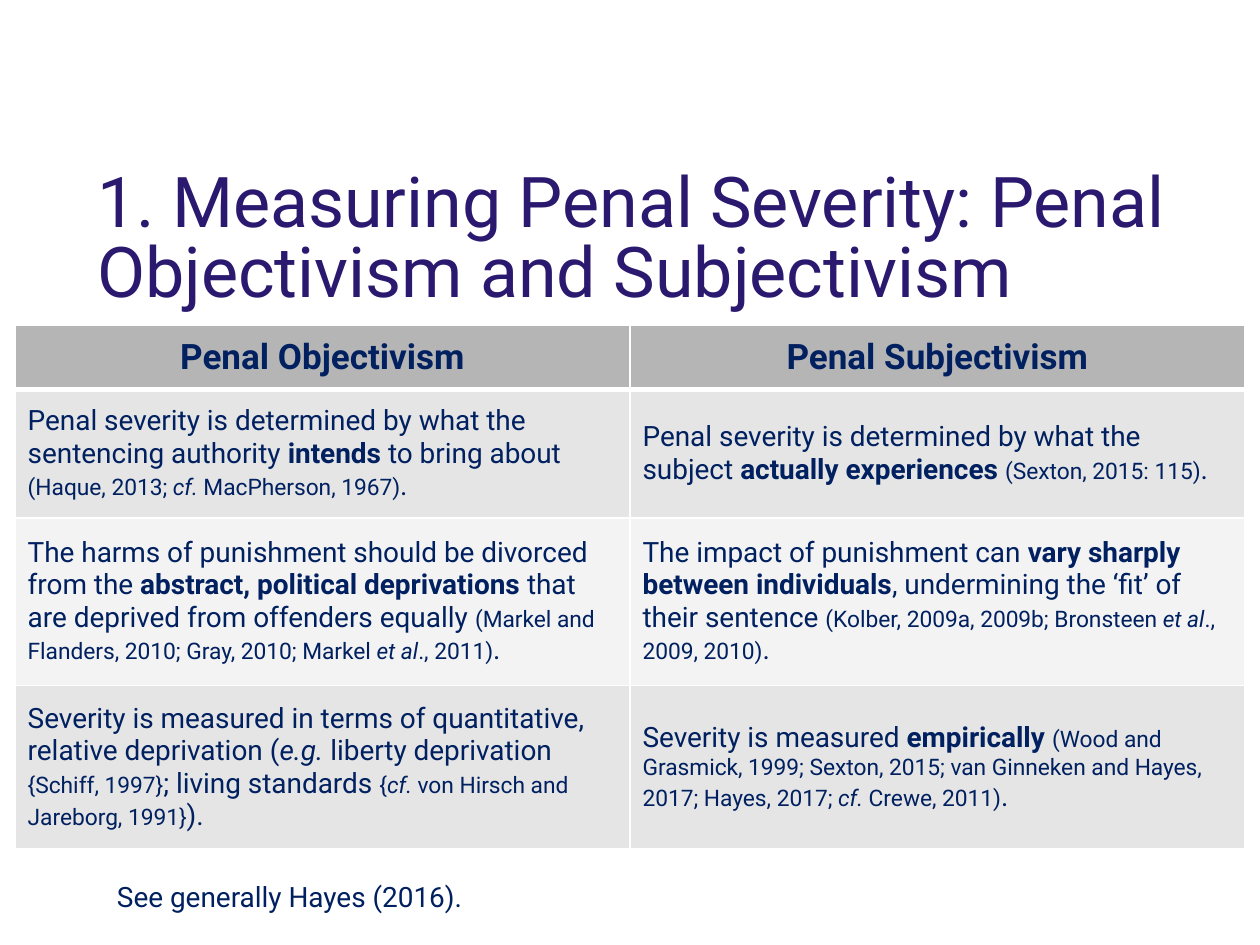
from dataclasses import dataclass

from lxml import etree
from pptx import Presentation
from pptx.dml.color import RGBColor
from pptx.enum.text import MSO_ANCHOR, MSO_AUTO_SIZE, PP_ALIGN
from pptx.oxml.ns import qn
from pptx.util import Pt

MIDDLE = MSO_ANCHOR.MIDDLE
LEFT, CENTER = PP_ALIGN.LEFT, PP_ALIGN.CENTER
FIXED, GROW = MSO_AUTO_SIZE.NONE, MSO_AUTO_SIZE.SHAPE_TO_FIT_TEXT
FACE = "Roboto"
NAVY, PURPLE, WHITE = "002060", "2A196F", "FFFFFF"
HEAD, DARK, LIGHT = "B5B5B5", "E5E5E5", "F3F3F3"


@dataclass(frozen=True)
class Part:
    text: str
    size: float = 16
    bold: bool = False
    slant: bool = False


@dataclass(frozen=True)
class Row:
    height: float
    fill: str
    cells: tuple
    align: PP_ALIGN = LEFT
    rule: float = 1


def head(text: str) -> Part:
    return Part(text, 20, True)


def bold(text: str) -> Part:
    return Part(text, bold=True)


def cite(text: str) -> Part:
    return Part(text, 13)


def slant(text: str, size: float = 13) -> Part:
    return Part(text, size, slant=True)


STOP = Part(".")
ROWS = (
    Row(36.72, HEAD, ((head("Penal Objectivism"),), (head("Penal Subjectivism"),)),
        CENTER, 3),
    Row(73.44, DARK, (
        (Part("Penal severity is determined by what the sentencing authority "),
         bold("intends"), Part(" to bring about "), cite("(Haque, 2013; "),
         slant("cf."), cite(" MacPherson, 1967)"), STOP),
        (Part("Penal severity is determined by what the subject "),
         bold("actually experiences "), cite("(Sexton, 2015: 115)"), STOP),
    )),
    Row(95.76, LIGHT, (
        (Part("The harms of punishment should be divorced from the "),
         bold("abstract, political deprivations"),
         Part(" that are deprived from offenders equally "),
         cite("(Markel and Flanders, 2010; Gray, 2010; Markel "),
         slant("et al"), cite("., 2011)"), STOP),
        (Part("The impact of punishment can "),
         bold("vary sharply between individuals"),
         Part(", undermining the ‘fit’ of their sentence "),
         cite("(Kolber, 2009a, 2009b; Bronsteen "),
         slant("et al"), cite("., 2009, 2010)"), STOP),
    )),
    Row(93.6, DARK, (
        (Part("Severity is measured in terms of quantitative, relative deprivation ("),
         slant("e.g.", 16), Part(" liberty deprivation"), cite(" {Schiff, 1997}"),
         Part("; living standards "), cite("{"), slant("cf."),
         cite(" von Hirsch and Jareborg, 1991}"), Part(").")),
        (Part("Severity is measured "), bold("empirically "),
         cite("(Wood and Grasmick, 1999; Sexton, 2015; van Ginneken and Hayes, "
              "2017; Hayes, 2017; "),
         slant("cf."), cite(" Crewe, 2011)"), STOP),
    )),
)


def color(code: str) -> RGBColor:
    return RGBColor.from_string(code)


def style(font, size: float, code: str) -> None:
    font.name = FACE
    font.size = Pt(size)
    font.color.rgb = color(code)


def write(para, parts: tuple) -> None:
    for part in parts:
        run = para.add_run()
        run.text = part.text
        style(run.font, part.size, NAVY)
        run.font.bold = part.bold
        run.font.italic = part.slant


def edge(cell, side: str, width: float) -> None:
    line = etree.SubElement(cell._tc.get_or_add_tcPr(), qn(f"a:ln{side}"),
                            w=str(Pt(width)))
    fill = etree.SubElement(line, qn("a:solidFill"))
    etree.SubElement(fill, qn("a:srgbClr"), val=WHITE)


def add_title(slide) -> None:
    title = slide.shapes.title
    title.left, title.top = Pt(48.24), Pt(108)
    title.width, title.height = Pt(648), Pt(59.76)
    frame = title.text_frame
    frame.text = "1. Measuring Penal Severity: Penal Objectivism and Subjectivism"
    frame.word_wrap = True
    frame.auto_size = FIXED
    frame.vertical_anchor = MIDDLE
    para = frame.paragraphs[0]
    para.alignment = LEFT
    para.line_spacing = 0.83
    style(para.runs[0].font, 40, PURPLE)


def add_grid(slide) -> None:
    high = sum(row.height for row in ROWS)
    grid = slide.shapes.add_table(len(ROWS), 2, Pt(8.64), Pt(185.76),
                                  Pt(702.72), Pt(high)).table
    for i, row in enumerate(ROWS):
        grid.rows[i].height = Pt(row.height)
        for j, parts in enumerate(row.cells):
            cell = grid.cell(i, j)
            for side in "LRT":
                edge(cell, side, 1)
            edge(cell, "B", row.rule)
            cell.fill.solid()
            cell.fill.fore_color.rgb = color(row.fill)
            cell.vertical_anchor = MIDDLE
            para = cell.text_frame.paragraphs[0]
            para.alignment = row.align
            write(para, parts)


def add_note(slide) -> None:
    box = slide.shapes.add_textbox(Pt(59.76), Pt(498.96), Pt(430.56), Pt(26.64))
    frame = box.text_frame
    frame.word_wrap = True
    frame.auto_size = GROW
    frame.text = "See generally Hayes (2016)."
    style(frame.paragraphs[0].runs[0].font, 16, NAVY)


def main() -> None:
    deck = Presentation()
    deck.slide_width, deck.slide_height = Pt(720), Pt(540)
    slide = deck.slides.add_slide(deck.slide_layouts[5])
    add_title(slide)
    add_grid(slide)
    add_note(slide)
    deck.save("out.pptx")


if __name__ == "__main__":
    main()
